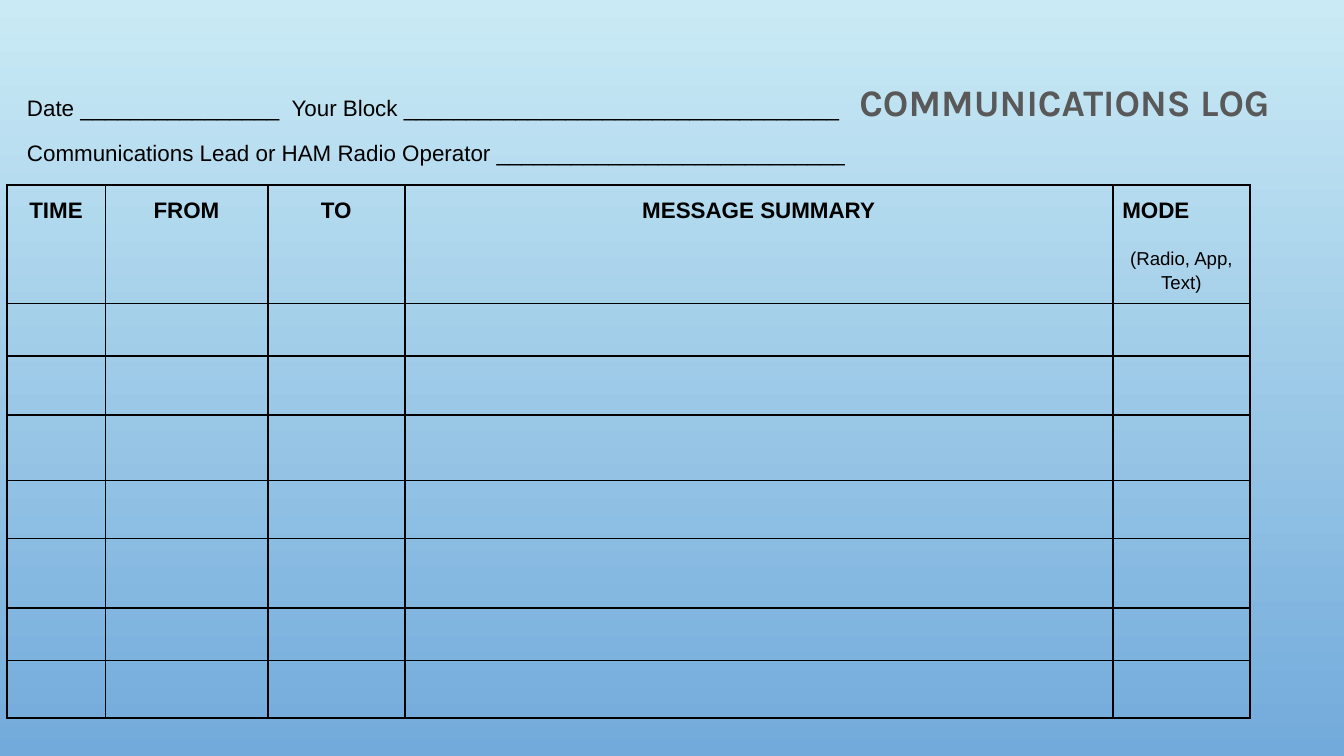
from lxml.etree import SubElement
from pptx import Presentation
from pptx.dml.color import RGBColor
from pptx.enum.text import MSO_ANCHOR, MSO_AUTO_SIZE, PP_ALIGN
from pptx.oxml.ns import qn
from pptx.util import Cm, Pt

BLACK = RGBColor(0x00, 0x00, 0x00)
GRAY = RGBColor(0x59, 0x59, 0x59)
SKY = RGBColor(0xCA, 0xEB, 0xF5)
BLUE = RGBColor(0x72, 0xAA, 0xDB)

TITLE_ONLY = 5
TAB_STOPS = (5, 15.73)
COLUMN_WIDTHS = (1.86, 3.07, 2.59, 13.38, 2.59)
ROW_HEIGHTS = (2.18, 0.99, 1.12, 1.24, 1.09, 1.32, 0.99, 1.09)
HEADINGS = ("TIME", "FROM", "TO", "MESSAGE SUMMARY", "MODE")
MODES = "(Radio, App, Text)"


def paint_background(page):
    fill = page.background.fill
    fill.gradient()
    fill.gradient_angle = 270
    for stop, color, position in zip(fill.gradient_stops, (SKY, BLUE), (0, 1)):
        stop.color.rgb = color
        stop.position = position


def style_font(font, size, bold=False, name="Arial", color=BLACK):
    font.name = name
    font.size = Pt(size)
    font.bold = bold
    font.color.rgb = color


def add_tab_stops(para):
    tab_list = SubElement(para._p.get_or_add_pPr(), qn("a:tabLst"))
    for position in TAB_STOPS:
        SubElement(tab_list, qn("a:tab"), pos=str(Cm(position)), algn="l")


def add_span(para, text, *style):
    span = para.add_run()
    span.text = text
    style_font(span.font, *style)


def fill_title(page):
    box = page.shapes.title
    box.left, box.top, box.width, box.height = Cm(0.23), Cm(0.48), Cm(25.4), Cm(5.54)
    frame = box.text_frame
    frame.word_wrap = True
    frame.auto_size = MSO_AUTO_SIZE.NONE
    frame.vertical_anchor = MSO_ANCHOR.TOP
    frame.margin_left, frame.margin_top = Cm(0.28), Cm(0.53)
    frame.margin_right = frame.margin_bottom = Cm(0.25)
    first = frame.paragraphs[0]
    add_tab_stops(first)
    add_span(first, "Date ________________\tYour Block ___________________________________\t", 12)
    add_span(first, "COMMUNICATIONS LOG", 20, True, "Karla", GRAY)
    second = frame.add_paragraph()
    add_span(second, "Communications Lead or HAM Radio Operator ____________________________", 12)
    for para in frame.paragraphs:
        para.alignment = PP_ALIGN.LEFT
        para.line_spacing = 1.57
        para.space_before = Pt(0)


def format_cell(cell):
    properties = cell._tc.get_or_add_tcPr()
    for side in ("a:lnL", "a:lnR", "a:lnT", "a:lnB"):
        line = SubElement(properties, qn(side), w=str(Pt(1)))
        color = SubElement(SubElement(line, qn("a:solidFill")), qn("a:srgbClr"))
        color.set("val", str(BLACK))
    cell.fill.background()
    cell.margin_left = cell.margin_right = Cm(0.18)
    cell.margin_top = cell.margin_bottom = Cm(0.18) if cell.text else 0


def write_cell_line(para, text, size, bold, alignment):
    para.text = text
    para.alignment = alignment
    para.line_spacing = 1.15
    style_font(para.font, size, bold)


def add_log_table(page):
    frame = page.shapes.add_table(
        len(ROW_HEIGHTS), len(COLUMN_WIDTHS), Cm(0.13), Cm(3.5),
        Cm(sum(COLUMN_WIDTHS)), Cm(sum(ROW_HEIGHTS)))
    table = frame.table
    table.first_row = table.horz_banding = False
    for column, width in zip(table.columns, COLUMN_WIDTHS):
        column.width = Cm(width)
    for row, height in zip(table.rows, ROW_HEIGHTS):
        row.height = Cm(height)
    for cell, heading in zip(table.rows[0].cells, HEADINGS):
        alignment = PP_ALIGN.LEFT if heading == "MODE" else PP_ALIGN.CENTER
        write_cell_line(cell.text_frame.paragraphs[0], heading, 12, True, alignment)
    modes = table.cell(0, len(HEADINGS) - 1).text_frame.add_paragraph()
    write_cell_line(modes, MODES, 10, False, PP_ALIGN.CENTER)
    modes.space_before = Pt(12)
    for cell in table.iter_cells():
        format_cell(cell)


def main():
    deck = Presentation()
    deck.slide_width, deck.slide_height = Cm(25.4), Cm(14.29)
    page = deck.slides.add_slide(deck.slide_layouts[TITLE_ONLY])
    paint_background(page)
    add_log_table(page)
    fill_title(page)
    deck.save("out.pptx")


if __name__ == "__main__":
    main()
